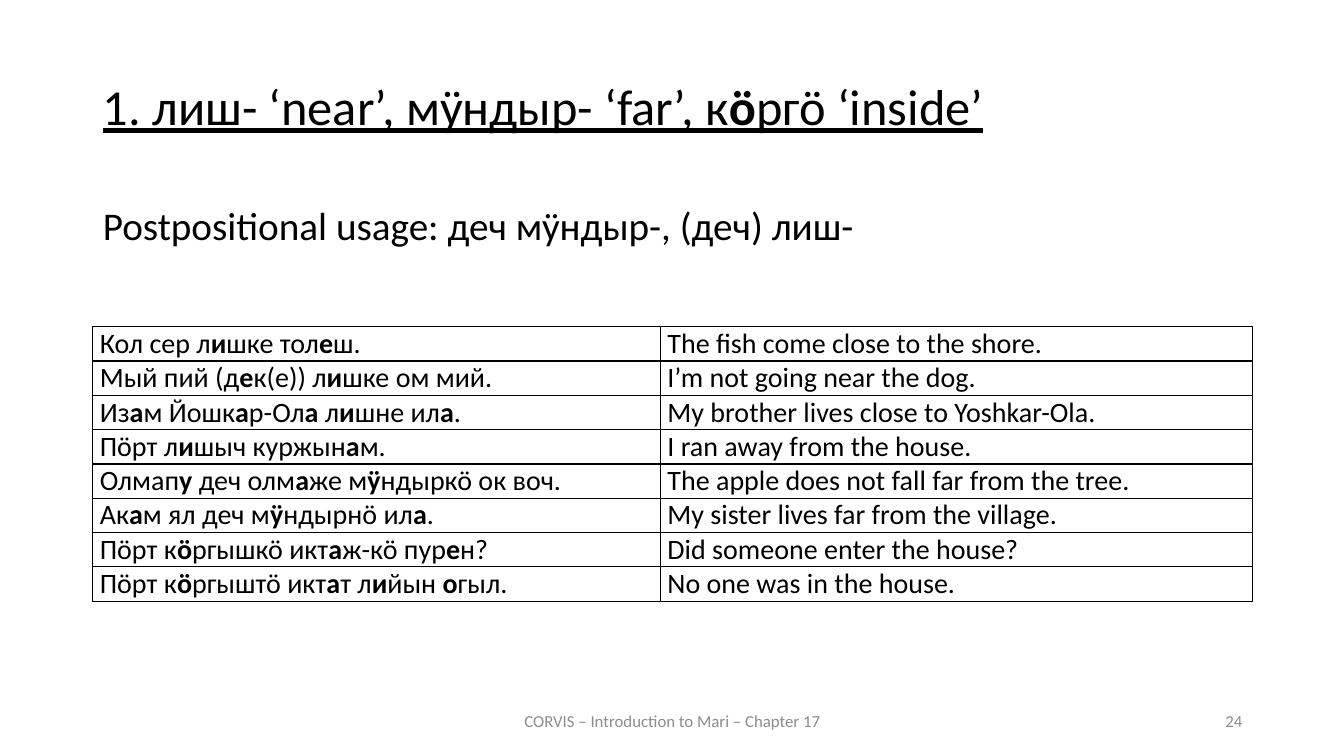
"""Build a slide on Mari postpositions with a table of example sentences."""
from lxml.etree import SubElement
from pptx import Presentation
from pptx.dml.color import RGBColor
from pptx.enum.text import MSO_ANCHOR as Anchor, PP_ALIGN as Align
from pptx.oxml.ns import qn
from pptx.util import Inches, Pt

WIDTH, HEIGHT = 13.33, 7.5
MARGIN, CONTENT = 0.92, 11.5
BLACK, GREY = "000000", "8C8C8C"
ROW_HEIGHT = 0.34
COLUMNS = (5.63, 5.87)
EXAMPLES = [
    ("Кол сер л*и*шке тол*е*ш.", "The fish come close to the shore."),
    ("Мый пий (д*е*к(е)) л*и*шке ом мий.", "I’m not going near the dog."),
    ("Из*а*м Йошк*а*р-Ол*а* л*и*шне ил*а*.", "My brother lives close to Yoshkar-Ola."),
    ("Пӧрт л*и*шыч куржын*а*м.", "I ran away from the house."),
    ("Олмап*у* деч олм*а*же м*ӱ*ндыркӧ ок воч.", "The apple does not fall far from the tree."),
    ("Ак*а*м ял деч м*ӱ*ндырнӧ ил*а*.", "My sister lives far from the village."),
    ("Пӧрт к*ӧ*ргышкӧ икт*а*ж-кӧ пур*е*н?", "Did someone enter the house?"),
    ("Пӧрт к*ӧ*ргыштӧ икт*а*т л*и*йын *о*гыл.", "No one was in the house."),
]


def color(value):
    return RGBColor.from_string(value)


def write(frame, text, size, fill=BLACK, align=Align.LEFT, anchor=Anchor.TOP,
          underline=False, spacing=1.0, before=0):
    frame.word_wrap = True
    frame.vertical_anchor = anchor
    para = frame.paragraphs[0]
    para.alignment, para.line_spacing, para.space_before = align, spacing, Pt(before)
    for index, piece in enumerate(text.split("*")):
        if piece:
            span = para.add_run()
            span.text = piece
            font = span.font
            font.name, font.size = "Calibri", Pt(size)
            font.bold, font.underline = index % 2 == 1, underline
            font.color.rgb = color(fill)
    return para


def place(box, left, top, width, height):
    box.left, box.top = Inches(left), Inches(top)
    box.width, box.height = Inches(width), Inches(height)


def add_footer(page, text, left, width, align):
    box = page.shapes.add_textbox(
        Inches(left), Inches(6.95), Inches(width), Inches(0.4))
    write(box.text_frame, text, 12, fill=GREY, align=align, anchor=Anchor.MIDDLE)


def add_borders(cell):
    properties = cell._tc.get_or_add_tcPr()
    for side in ("a:lnL", "a:lnR", "a:lnT", "a:lnB"):
        line = SubElement(properties, qn(side), w=str(Pt(1)))
        solid = SubElement(line, qn("a:solidFill"))
        SubElement(solid, qn("a:srgbClr"), val=BLACK)


def add_examples(page):
    table = page.shapes.add_table(
        len(EXAMPLES), len(COLUMNS), Inches(MARGIN), Inches(3.24),
        Inches(CONTENT), Inches(ROW_HEIGHT * len(EXAMPLES))).table
    table.first_row = table.horz_banding = False
    for column, width in zip(table.columns, COLUMNS):
        column.width = Inches(width)
    for row, sentences in zip(table.rows, EXAMPLES):
        row.height = Inches(ROW_HEIGHT)
        for cell, sentence in zip(row.cells, sentences):
            cell.margin_left = cell.margin_right = Inches(0.07)
            cell.margin_top = cell.margin_bottom = 0
            write(cell.text_frame, sentence, 20)
            cell.vertical_anchor = Anchor.MIDDLE
            add_borders(cell)
            cell.fill.background()


def main():
    deck = Presentation()
    deck.slide_width, deck.slide_height = Inches(WIDTH), Inches(HEIGHT)
    page = deck.slides.add_slide(deck.slide_layouts[1])
    title, body = page.placeholders
    place(title, MARGIN, 0.76, CONTENT, 0.99)
    write(title.text_frame, "1. лиш- ‘near’, мӱндыр- ‘far’, к*ӧ*ргӧ ‘inside’", 36,
          align=Align.JUSTIFY, underline=True, spacing=0.9, before=12)
    place(body, MARGIN, 2, CONTENT, 4.76)
    para = write(body.text_frame, "Postpositional usage: деч мӱндыр-, (деч) лиш-", 28,
                 spacing=0.9, before=10)
    properties = para._p.get_or_add_pPr()
    properties.set("marL", "0")
    properties.set("indent", "0")
    SubElement(properties, qn("a:buNone"))
    add_examples(page)
    add_footer(page, "CORVIS – Introduction to Mari – Chapter 17", 4.42, 4.5, Align.CENTER)
    add_footer(page, "24", 9.42, 3, Align.RIGHT)
    deck.save("out.pptx")


if __name__ == "__main__":
    main()
